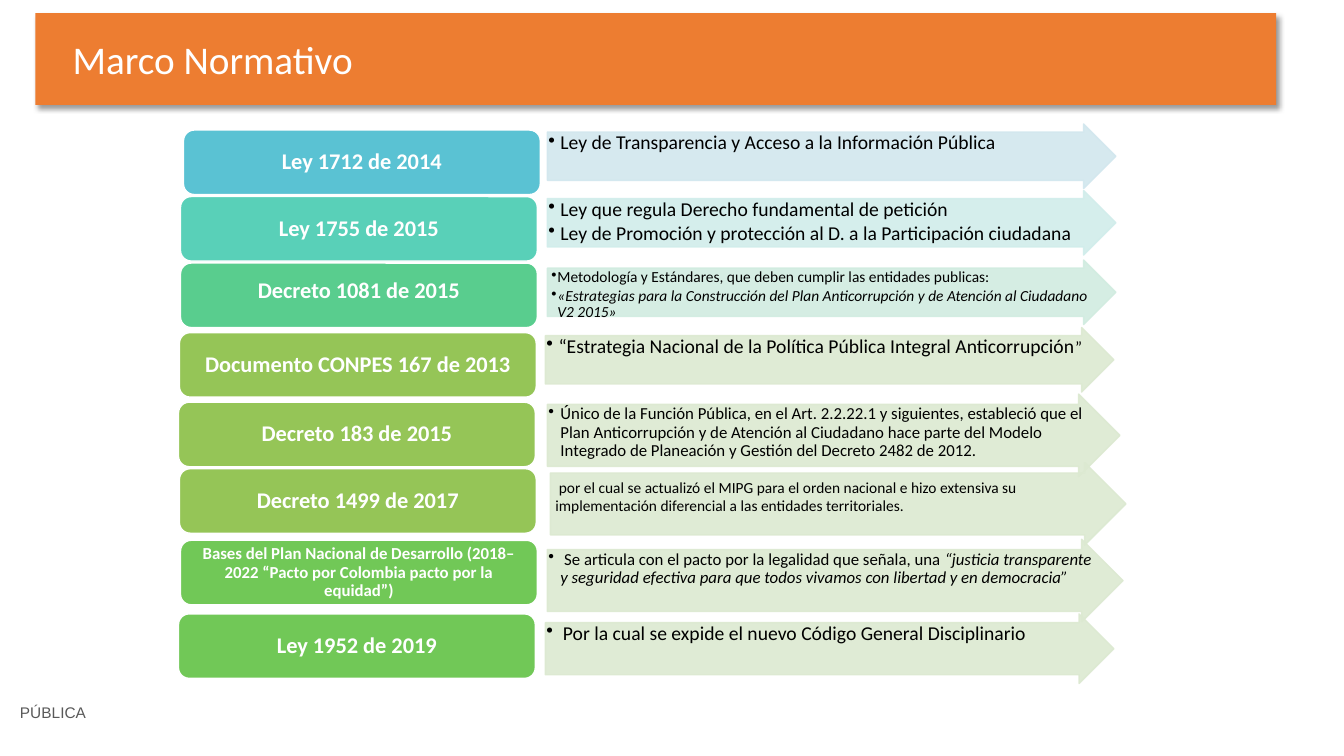
from dataclasses import dataclass

from lxml.etree import SubElement
from pptx import Presentation
from pptx.dml.color import RGBColor
from pptx.enum.shapes import MSO_SHAPE as Kind
from pptx.enum.text import MSO_ANCHOR as Anchor, MSO_AUTO_SIZE as Fit, PP_ALIGN as Align
from pptx.oxml import parse_xml
from pptx.oxml.ns import nsdecls, qn
from pptx.util import Inches, Pt

WIDE, HIGH = Inches(13.33), Inches(7.5)
BOX_W, BOX_H = 26.55, 8.53  # percent of the slide
PAD_X, PAD_Y = 0.22, 0.4
GREEN, LEAF, PALE = "95C557", "71C857", "DCE9D1"


@dataclass(frozen=True)
class Area:
    """A place on the slide, in percent of its width and height."""
    x: float
    y: float
    w: float
    h: float

    def place(self) -> tuple[int, int, int, int]:
        return (int(WIDE * self.x / 100), int(HIGH * self.y / 100),
                int(WIDE * self.w / 100), int(HIGH * self.h / 100))


@dataclass(frozen=True)
class Part:
    text: str
    size: float = 14
    slant: bool = False


@dataclass(frozen=True)
class Law:
    name: str
    x: float
    y: float
    fill: str
    tint: str
    arrow: Area
    notes: list[list[Part]]
    size: float = 16
    lift: float = 0
    shift: float = 0
    hang: float = 0.12


LAWS = [
    Law("Ley 1712 de 2014", 13.65, 17.2, "5AC2D3", "D2E7EE", Area(40.73, 16.4, 42.3, 8.53),
        [[Part("Ley de Transparencia y Acceso a la Información Pública")]]),
    Law("Ley 1755 de 2015", 13.43, 26, "59D0B8", "D1EDEB", Area(40.73, 25.2, 42.3, 8.53),
        [[Part("Ley que regula Derecho fundamental de petición")],
         [Part("Ley de Promoción y protección al D. a la Participación ciudadana")]]),
    Law("Decreto 1081 de 2015", 13.43, 34.8, "59CD8E", "D1ECE0", Area(40.73, 34.4, 42.3, 8.53),
        [[Part("Metodología y Estándares, que deben cumplir las entidades publicas:", 11)],
         [Part("«Estrategias para la Construcción del Plan Anticorrupción y de Atención "
               "al Ciudadano V2 2015»", 11, True)]], lift=0.53, shift=0.22, hang=0.06),
    Law("Documento CONPES 167 de 2013", 13.35, 44, GREEN, PALE, Area(40.58, 43.33, 42.3, 8.53),
        [[Part("“Estrategia Nacional de la Política Pública Integral Anticorrupción"),
          Part("”", 12)]]),
    Law("Decreto 183 de 2015", 13.28, 53.2, GREEN, PALE, Area(40.73, 52.13, 42.6, 10.93),
        [[Part("Único de la Función Pública, en el Art. 2.2.22.1 y siguientes, estableció que el "
               "Plan Anticorrupción y de Atención al Ciudadano hace parte del Modelo "
               "Integrado de Planeación y Gestión del Decreto 2482 de 2012.", 12)]]),
    Law("Decreto 1499 de 2017", 13.35, 62, GREEN, PALE, Area(40.95, 61.2, 42.83, 10.93),
        [[Part(" por el cual se actualizó el MIPG para el orden nacional e hizo extensiva su "
               "implementación diferencial a las entidades territoriales.", 11)]],
        shift=-0.37, hang=0),
    Law("Bases del Plan Nacional de Desarrollo (2018–2022 “Pacto por Colombia pacto por la "
        "equidad”)", 13.43, 71.47, LEAF, PALE, Area(40.73, 71.33, 42.83, 10.93),
        [[Part(" Se articula con el pacto por la legalidad que señala, una ", 12),
          Part("“justicia transparente y seguridad efectiva para que todos vivamos con "
               "libertad y en democracia”", 12, True)]], size=12),
    Law("Ley 1952 de 2019", 13.28, 81.2, LEAF, PALE, Area(40.58, 81.2, 42.3, 9.2),
        [[Part(" Por la cual se expide el nuevo Código General Disciplinario")]]),
]


def color(code: str) -> RGBColor:
    return RGBColor.from_string(code)


def style(run, size: float, code: str, bold=False, slant=False, face="Calibri") -> None:
    font = run.font
    font.name, font.size, font.bold, font.italic = face, Pt(size), bold, slant
    font.color.rgb = color(code)


def add_shape(slide, kind, area: Area, fill: str, line: str):
    shape = slide.shapes.add_shape(kind, *area.place())
    shape.shadow.inherit = False
    shape.fill.solid()
    shape.fill.fore_color.rgb = color(fill)
    shape.line.color.rgb = color(line)
    shape.line.width = Pt(1)
    return shape


def add_frame(slide, area: Area, side=0.1, edge=0.05):
    """Add a wrapping text box; side and edge are its insets in inches."""
    frame = slide.shapes.add_textbox(*area.place()).text_frame
    frame.word_wrap = True
    frame.margin_left = frame.margin_right = Inches(side)
    frame.margin_top = frame.margin_bottom = Inches(edge)
    return frame


def add_label(slide, law: Law) -> None:
    add_shape(slide, Kind.ROUNDED_RECTANGLE, Area(law.x, law.y, BOX_W, BOX_H), law.fill, "FFFFFF")
    area = Area(law.x + PAD_X, law.y + PAD_Y - law.lift, BOX_W - 2 * PAD_X, BOX_H - 2 * PAD_Y)
    frame = add_frame(slide, area, 0.07, 0.03)
    frame.vertical_anchor = Anchor.MIDDLE
    frame.text = law.name
    para = frame.paragraphs[0]
    para.alignment, para.line_spacing = Align.CENTER, 0.9
    style(para.runs[0], law.size, "FFFFFF", bold=True)


def add_bullet(para, hang: float, size: float) -> None:
    props = para._p.get_or_add_pPr()
    props.set("marL", str(Inches(hang)))
    props.set("indent", str(-Inches(hang)))
    SubElement(props, qn("a:buChar"), char="•")
    para.line_spacing = 0.9
    para.space_after = Pt(round(size * 0.15, 1))


def add_notes(slide, law: Law) -> None:
    spot = law.arrow
    arrow = add_shape(slide, Kind.RIGHT_ARROW, spot, law.tint, law.tint)
    arrow.adjustments[0] = 0.75
    for tone in arrow._element.spPr.iter(qn("a:srgbClr")):
        SubElement(tone, qn("a:alpha"), val="90000")
    area = Area(spot.x + law.shift, spot.y + spot.h / 8, spot.w - 1.9, spot.h * 0.75)
    frame = add_frame(slide, area, 0.01, 0.01) if law.hang else add_frame(slide, area)
    for i, parts in enumerate(law.notes):
        para = frame.add_paragraph() if i else frame.paragraphs[0]
        if law.hang:
            add_bullet(para, law.hang, parts[0].size)
        for part in parts:
            run = para.add_run()
            run.text = part.text
            style(run, part.size, "000000", slant=part.slant)


def set_title(slide, text: str) -> None:
    """Turn the title placeholder into the rounded banner."""
    title = slide.shapes.title
    title.left, title.top, title.width, title.height = Area(2.63, 1.73, 92.33, 12.13).place()
    props = title._element.spPr
    props.append(parse_xml(f'<a:prstGeom {nsdecls("a")} prst="roundRect"><a:avLst/></a:prstGeom>'))
    title.fill.solid()
    title.fill.fore_color.rgb = color("ED7D31")
    props.append(parse_xml(
        f'<a:effectLst {nsdecls("a")}><a:outerShdw blurRad="{Pt(4)}" dist="{Pt(3)}" dir="2700000" '
        'algn="tl" rotWithShape="0"><a:srgbClr val="000000"><a:alpha val="40000"/></a:srgbClr>'
        '</a:outerShdw></a:effectLst>'))
    frame = title.text_frame
    frame.text = text
    frame.auto_size = Fit.NONE
    frame.vertical_anchor = Anchor.MIDDLE
    frame.margin_left = Inches(0.37)
    para = frame.paragraphs[0]
    para.alignment = Align.LEFT
    style(para.runs[0], 28, "FFFFFF")


def main() -> None:
    deck = Presentation()
    deck.slide_width, deck.slide_height = WIDE, HIGH
    slide = deck.slides.add_slide(deck.slide_layouts[5])
    set_title(slide, "Marco Normativo")
    for law in LAWS:
        add_label(slide, law)
        add_notes(slide, law)
    mark = add_frame(slide, Area(0.75, 92.4, 8.93, 3.87))
    mark.text = "PÚBLICA"
    style(mark.paragraphs[0].runs[0], 11, "595959", face="Arial")
    deck.save("out.pptx")


if __name__ == "__main__":
    main()
